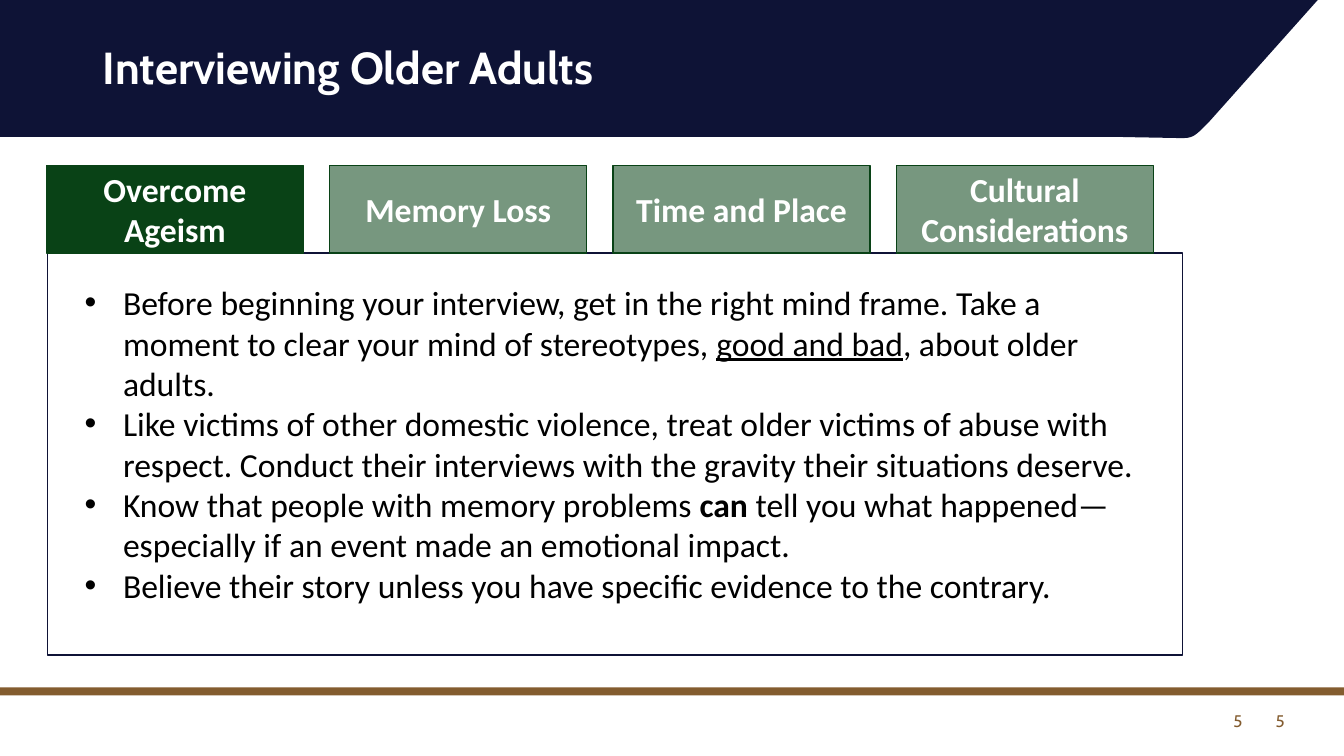
from dataclasses import dataclass

from lxml import etree
from pptx import Presentation
from pptx.dml.color import RGBColor
from pptx.enum.shapes import MSO_SHAPE
from pptx.enum.text import MSO_ANCHOR, MSO_AUTO_SIZE, PP_ALIGN
from pptx.oxml.ns import qn
from pptx.util import Inches, Pt

RECT = MSO_SHAPE.RECTANGLE
TOP, MIDDLE = MSO_ANCHOR.TOP, MSO_ANCHOR.MIDDLE
LEFT, CENTER, RIGHT = PP_ALIGN.LEFT, PP_ALIGN.CENTER, PP_ALIGN.RIGHT
NO_FIT = MSO_AUTO_SIZE.NONE

COLORS = {
    "navy": "0E1336",
    "edge": "0F1336",
    "brown": "835C2F",
    "green": "094216",
    "white": "FFFFFF",
    "black": "000000",
}
HEAD, BODY = "Cabin", "Calibri"
TAB_LEFT, TAB_TOP, TAB_STEP = 0.46, 1.64, 2.81
TAB_W, TAB_H = 2.55, 0.87


@dataclass
class Box:
    left: float
    top: float
    width: float
    height: float

    def inches(self) -> list:
        return [Inches(v) for v in (self.left, self.top, self.width, self.height)]


@dataclass
class Tab:
    label: str
    alpha: int = 55


@dataclass
class Point:
    """A list item whose middle part may be underlined or bold."""
    start: str
    mark: str = ""
    end: str = ""
    bold: bool = False


TABS = [
    Tab("Overcome Ageism", 100),
    Tab("Memory Loss"),
    Tab("Time and Place"),
    Tab("Cultural Considerations"),
]
POINTS = [
    Point("Before beginning your interview, get in the right mind frame. Take a "
          "moment to clear your mind of stereotypes, ", "good and bad",
          ", about older adults."),
    Point("Like victims of other domestic violence, treat older victims of abuse "
          "with respect. Conduct their interviews with the gravity their "
          "situations deserve."),
    Point("Know that people with memory problems ", "can",
          " tell you what happened—especially if an event made an emotional "
          "impact.", bold=True),
    Point("Believe their story unless you have specific evidence to the contrary."),
]


def color(name: str) -> RGBColor:
    return RGBColor.from_string(COLORS[name])


def paint(shape, fill: str, line: str = "") -> None:
    shape.shadow.inherit = False
    shape.fill.solid()
    shape.fill.fore_color.rgb = color(fill)
    if line:
        shape.line.color.rgb = color(line)
        shape.line.width = Pt(1)
    else:
        shape.line.fill.background()


def add_rect(slide, box: Box, fill: str, line: str = ""):
    shape = slide.shapes.add_shape(RECT, *box.inches())
    paint(shape, fill, line)
    return shape


def style(para, face: str, size: int, ink: str, align, bold: bool = False) -> None:
    para.alignment = align
    font = para.font
    font.name, font.size, font.bold = face, Pt(size), bold
    font.color.rgb = color(ink)


def place(shape, box: Box) -> None:
    """Move a placeholder to its box and bring it to the front."""
    shape.left, shape.top, shape.width, shape.height = box.inches()
    tree = shape._element.getparent()
    tree.append(shape._element)
    frame = shape.text_frame
    frame.word_wrap, frame.auto_size = True, NO_FIT
    frame.vertical_anchor = TOP


def curve(a: tuple, b: tuple, c: tuple, d: tuple, steps: int = 16) -> list:
    """Points along a cubic curve from a to d."""
    spots = []
    for i in range(1, steps + 1):
        t = i / steps
        u = 1 - t
        spots.append(tuple(
            u**3 * p + 3 * u * u * t * q + 3 * u * t * t * r + t**3 * s
            for p, q, r, s in zip(a, b, c, d)))
    return spots


def add_banner(slide) -> None:
    add_rect(slide, Box(0, 0, 11.17, 1.36), "navy")
    bend = curve((11.68, 1.37), (11.82, 1.37), (11.83, 1.38), (12, 1.2))
    spots = [(11.68, 1.37), *bend, (13.07, 0), (11.14, 0)]
    form = slide.shapes.build_freeform(Inches(11.14), Inches(1.36))
    form.add_line_segments([(Inches(x), Inches(y)) for x, y in spots])
    paint(form.convert_to_shape(), "navy")


def add_number(slide, left: float) -> None:
    frame = slide.shapes.add_textbox(*Box(left, 6.95, 3, 0.4).inches()).text_frame
    frame.word_wrap, frame.vertical_anchor = True, MIDDLE
    frame.text = "5"
    style(frame.paragraphs[0], HEAD, 12, "brown", RIGHT)


def add_tab(slide, tab: Tab, index: int) -> None:
    box = Box(TAB_LEFT + index * TAB_STEP, TAB_TOP, TAB_W, TAB_H)
    shape = add_rect(slide, box, "green", "green")
    if tab.alpha < 100:
        tint = shape._element.spPr.find(qn("a:solidFill"))[0]
        etree.SubElement(tint, qn("a:alpha"), val=str(tab.alpha * 1000))
    frame = shape.text_frame
    frame.word_wrap, frame.vertical_anchor = True, MIDDLE
    frame.text = tab.label
    style(frame.paragraphs[0], BODY, 24, "white", CENTER, True)


def fill_point(para, point: Point) -> None:
    props = para._p.get_or_add_pPr()
    props.set("marL", str(Inches(0.38)))
    props.set("indent", str(-Inches(0.38)))
    para.space_before = Pt(0)
    etree.SubElement(props, qn("a:buFont"), typeface="Arial")
    etree.SubElement(props, qn("a:buChar"), char="•")
    style(para, BODY, 24, "black", LEFT)
    para.add_run().text = point.start
    if point.mark:
        run = para.add_run()
        run.text = point.mark
        if point.bold:
            run.font.bold = True
        else:
            run.font.underline = True
        para.add_run().text = point.end


def main() -> None:
    deck = Presentation()
    deck.slide_width, deck.slide_height = Inches(13.33), Inches(7.5)
    slide = deck.slides.add_slide(deck.slide_layouts[1])

    add_banner(slide)
    add_rect(slide, Box(0, 6.82, 13.33, 0.08), "brown")

    title = slide.shapes.title
    place(title, Box(0.92, 0.4, 11.5, 1.45))
    title.text_frame.text = "Interviewing Older Adults"
    para = title.text_frame.paragraphs[0]
    para.line_spacing = 0.9
    style(para, HEAD, 32, "white", LEFT, True)

    for left in (9.84, 9.42):
        add_number(slide, left)

    add_rect(slide, Box(0.47, 2.51, 11.26, 3.99), "white", "edge")
    body = slide.placeholders[1]
    place(body, Box(0.74, 2.75, 10.81, 4.14))
    frame = body.text_frame
    for i, point in enumerate(POINTS):
        fill_point(frame.add_paragraph() if i else frame.paragraphs[0], point)

    for i, tab in enumerate(TABS):
        add_tab(slide, tab, i)

    deck.save("out.pptx")


if __name__ == "__main__":
    main()
